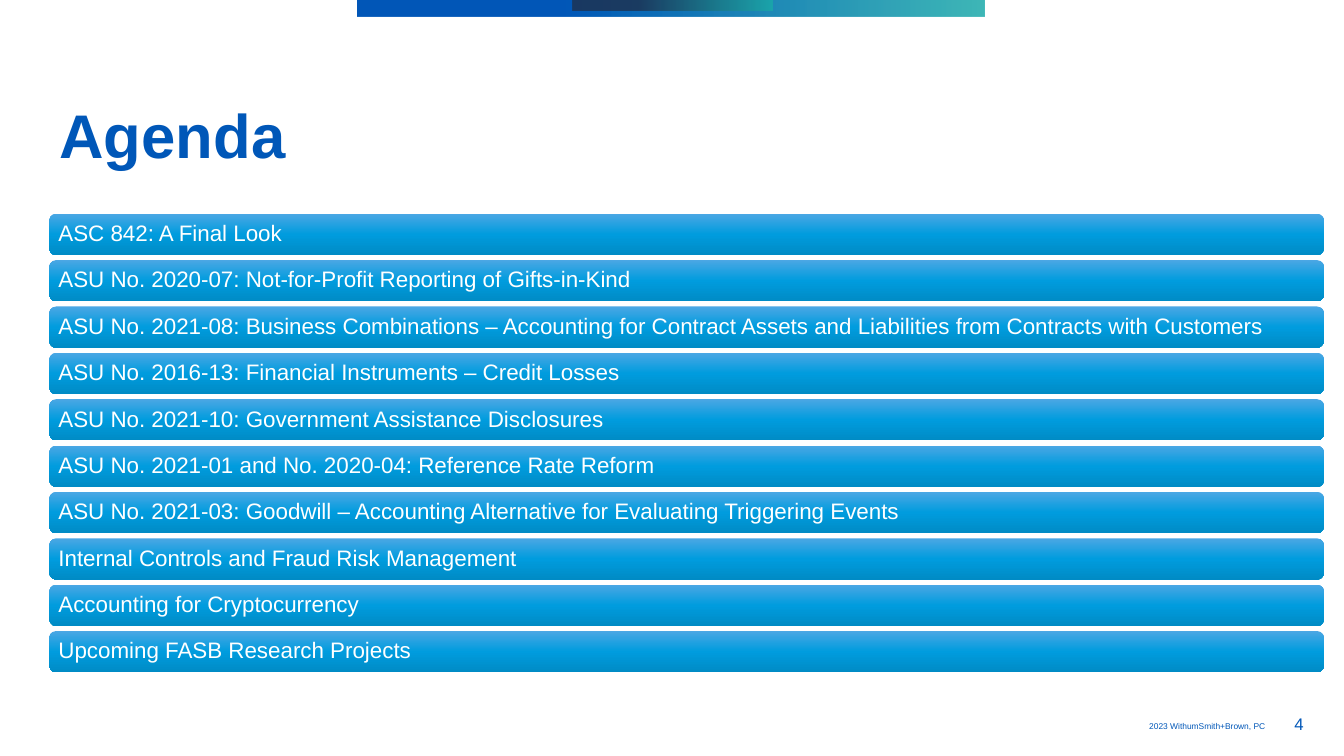
from lxml.etree import SubElement
from pptx import Presentation
from pptx.dml.color import RGBColor
from pptx.enum.shapes import MSO_SHAPE
from pptx.enum.text import MSO_ANCHOR, MSO_AUTO_SIZE, PP_ALIGN
from pptx.oxml.ns import qn
from pptx.util import Inches, Pt

BLUE, NAVY, TEAL, WHITE = "0057B8", "1E3453", "1BAAAA", "FFFFFF"
BAR_STOPS = [(0, "4BA7E4", 100), (50, "009CDE", 100), (100, "008BC5", 100)]
AGENDA = [
    "ASC 842: A Final Look",
    "ASU No. 2020-07: Not-for-Profit Reporting of Gifts-in-Kind",
    "ASU No. 2021-08: Business Combinations – Accounting for Contract Assets "
    "and Liabilities from Contracts with Customers",
    "ASU No. 2016-13: Financial Instruments – Credit Losses",
    "ASU No. 2021-10: Government Assistance Disclosures",
    "ASU No. 2021-01 and No. 2020-04: Reference Rate Reform",
    "ASU No. 2021-03: Goodwill – Accounting Alternative for Evaluating Triggering Events",
    "Internal Controls and Fraud Risk Management",
    "Accounting for Cryptocurrency",
    "Upcoming FASB Research Projects",
]


def color(hex_string):
    return RGBColor.from_string(hex_string)


def write(shape, text, size, hex_string, bold=False, align=PP_ALIGN.LEFT, spacing=1.0):
    paragraph = shape.text_frame.paragraphs[0]
    paragraph.text = text
    paragraph.alignment = align
    paragraph.line_spacing = spacing
    font = paragraph.font
    font.name, font.size, font.bold = "Arial", Pt(size), bold
    font.color.rgb = color(hex_string)


def add_gradient_shape(slide, preset, box, stops, angle):
    """Stops are (position %, colour, opacity %); the angle is counter-clockwise."""
    shape = slide.shapes.add_shape(preset, *map(Inches, box))
    shape.shadow.inherit = False
    shape.line.fill.background()
    shape.fill.gradient()
    shape.fill.gradient_angle = angle
    stop_list = next(shape.element.iter(qn("a:gsLst")))
    stop_list.clear()
    for position, hex_string, opacity in stops:
        stop = SubElement(stop_list, qn("a:gs"), pos=str(position * 1000))
        stop_color = SubElement(stop, qn("a:srgbClr"), val=hex_string)
        if opacity < 100:
            SubElement(stop_color, qn("a:alpha"), val=str(opacity * 1000))
    return shape


def add_top_band(slide, left, top, width, height):
    add_gradient_shape(slide, MSO_SHAPE.RECTANGLE, (left, top, width, height),
                       [(33, BLUE, 100), (100, TEAL, 84)], 0)
    add_gradient_shape(slide, MSO_SHAPE.RECTANGLE, (left + 2.13, top, 1.98, 0.1),
                       [(33, NAVY, 84), (100, TEAL, 84)], 0)


def add_title(slide, left, top, width, height):
    title = slide.shapes.title
    title.left, title.top = Inches(left), Inches(top)
    title.width, title.height = Inches(width), Inches(height)
    title.text_frame.vertical_anchor = MSO_ANCHOR.BOTTOM
    title.text_frame.auto_size = MSO_AUTO_SIZE.NONE
    write(title, "Agenda", 44, BLUE, bold=True, spacing=0.9)


def add_agenda(slide, left, top, width, height):
    gap = 0.05
    pitch = (height + gap) / len(AGENDA)
    for index, topic in enumerate(AGENDA):
        box = (left, top + index * pitch, width, pitch - gap)
        bar = add_gradient_shape(slide, MSO_SHAPE.ROUNDED_RECTANGLE, box, BAR_STOPS, 270)
        frame = bar.text_frame
        frame.word_wrap = True
        frame.vertical_anchor = MSO_ANCHOR.MIDDLE
        frame.margin_left = frame.margin_right = Inches(0.07)
        frame.margin_top = frame.margin_bottom = Inches(0.05)
        write(bar, topic, 16, WHITE, spacing=0.9)


def add_footer(slide, left, top, width, height):
    # Copyright line
    owner = slide.shapes.add_textbox(Inches(left), Inches(top + 0.07), Inches(1.37), Inches(0.2))
    owner.text_frame.word_wrap = False
    write(owner, "2023 WithumSmith+Brown, PC", 6, BLUE)
    # Page number
    number_width = 0.55
    number = slide.shapes.add_textbox(Inches(left + width - number_width), Inches(top),
                                      Inches(number_width), Inches(height))
    number.text_frame.word_wrap = True
    write(number, "4", 12, BLUE, align=PP_ALIGN.CENTER)


def main():
    presentation = Presentation()
    presentation.slide_width, presentation.slide_height = Inches(13.33), Inches(7.5)
    slide = presentation.slides.add_slide(presentation.slide_layouts[5])
    add_top_band(slide, 3.55, 0, 6.21, 0.16)
    add_title(slide, 0.49, 0.4, 12.65, 1.35)
    add_agenda(slide, 0.49, 2.12, 12.64, 4.55)
    add_footer(slide, 11.3, 7.03, 1.86, 0.3)
    presentation.save("out.pptx")


if __name__ == "__main__":
    main()
